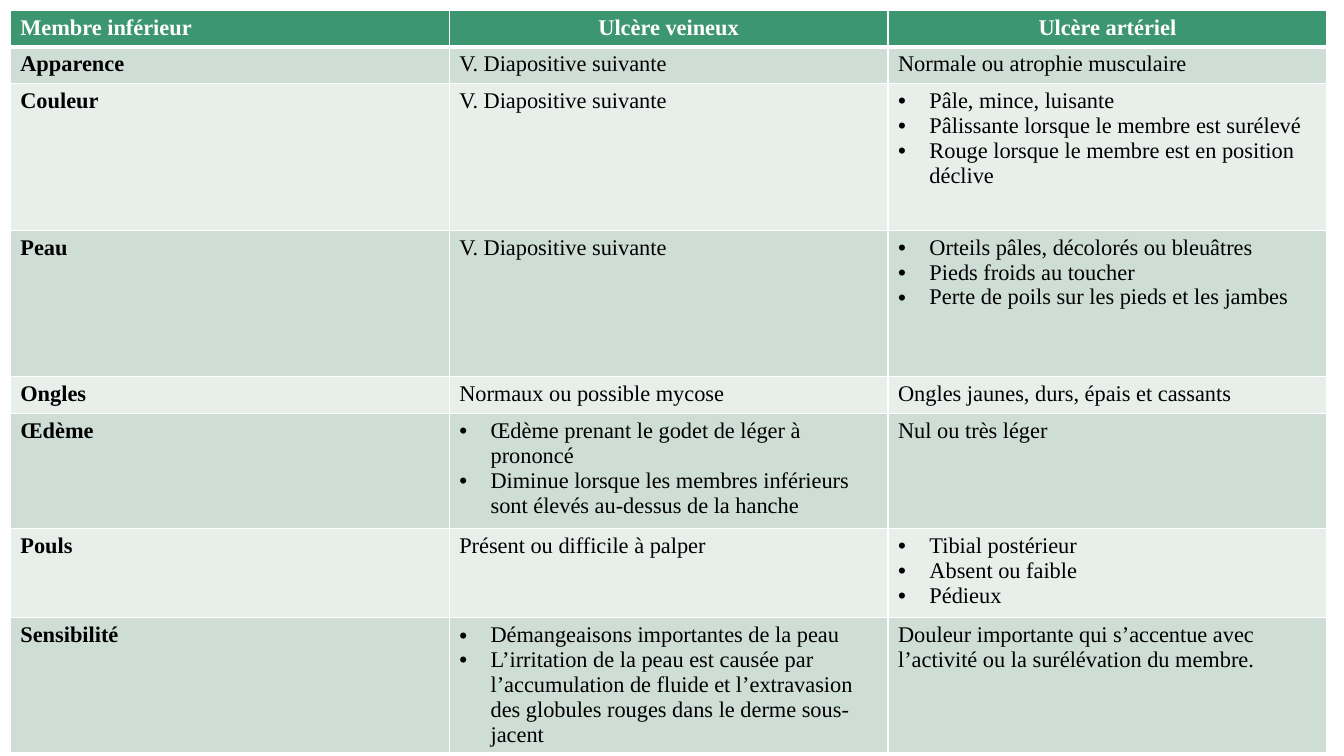
"""Builds a slide with a table comparing venous and arterial leg ulcers."""
from lxml.etree import SubElement
from pptx import Presentation
from pptx.dml.color import RGBColor
from pptx.enum.text import PP_ALIGN
from pptx.oxml import parse_xml
from pptx.oxml.ns import nsdecls, qn
from pptx.util import Cm, Pt

COLORS = {"header": "3C9770", "odd": "CEDDD5", "even": "E8EFEB",
          "white": "FFFFFF", "text": "000000"}
HEADERS = ["Membre inférieur", "Ulcère veineux", "Ulcère artériel"]
NEXT_SLIDE = "V. Diapositive suivante"
ROWS = [
    (0.92, HEADERS),
    (0.93, ["Apparence", NEXT_SLIDE, "Normale ou atrophie musculaire"]),
    (3.69, ["Couleur", NEXT_SLIDE,
            ["Pâle, mince, luisante",
             "Pâlissante lorsque le membre est surélevé",
             "Rouge lorsque le membre est en position déclive"]]),
    (3.69, ["Peau", NEXT_SLIDE,
            ["Orteils pâles, décolorés ou bleuâtres",
             "Pieds froids au toucher",
             "Perte de poils sur les pieds et les jambes"]]),
    (0.93, ["Ongles", "Normaux ou possible mycose",
            "Ongles jaunes, durs, épais et cassants"]),
    (2.9, ["Œdème",
           ["Œdème prenant le godet de léger à prononcé",
            "Diminue lorsque les membres inférieurs sont élevés "
            "au-dessus de la hanche"],
           "Nul ou très léger"]),
    (2.25, ["Pouls", "Présent ou difficile à palper",
            ["Tibial postérieur", "Absent ou faible", "Pédieux"]]),
    (3.15, ["Sensibilité",
            ["Démangeaisons importantes de la peau",
             "L’irritation de la peau est causée par l’accumulation de fluide "
             "et l’extravasion des globules rouges dans le derme sous-jacent"],
            "Douleur importante qui s’accentue avec l’activité ou la "
            "surélévation du membre."]),
]


def add_borders(cell, row):
    """Draw white cell borders, thicker below the header."""
    widths = {"lnL": 1, "lnR": 1, "lnT": 3 if row == 1 else 1,
              "lnB": 3 if row == 0 else 1}
    for i, (side, width) in enumerate(widths.items()):
        cell._tc.get_or_add_tcPr().insert(i, parse_xml(
            f'<a:{side} {nsdecls("a")} w="{Pt(width)}"><a:solidFill>'
            f'<a:srgbClr val="{COLORS["white"]}"/></a:solidFill></a:{side}>'))


def add_bullet(p):
    """Give a paragraph a round bullet with a hanging indent."""
    pPr = p._p.get_or_add_pPr()
    pPr.set("marL", str(Cm(0.79)))
    pPr.set("indent", str(-Cm(0.79)))
    SubElement(pPr, qn("a:buFont")).set("typeface", "Arial")
    SubElement(pPr, qn("a:buChar")).set("char", "•")


prs = Presentation()
prs.slide_width, prs.slide_height = Cm(33.87), Cm(19.05)
s = prs.slides.add_slide(prs.slide_layouts[6])

total = sum(height for height, _ in ROWS)
table = s.shapes.add_table(len(ROWS), len(HEADERS), Cm(0.26), Cm(0.26),
                           Cm(33.18), Cm(total)).table
for column in table.columns:
    column.width = Cm(11.06)

for row, (height, contents) in enumerate(ROWS):
    table.rows[row].height = Cm(height)
    fill = "header" if row == 0 else "odd" if row % 2 else "even"
    for col, content in enumerate(contents):
        cell = table.cell(row, col)
        cell.fill.solid()
        cell.fill.fore_color.rgb = RGBColor.from_string(COLORS[fill])
        add_borders(cell, row)
        tf = cell.text_frame
        bulleted = isinstance(content, list)
        for i, line in enumerate(content if bulleted else [content]):
            p = tf.add_paragraph() if i else tf.paragraphs[0]
            if bulleted:
                add_bullet(p)
            if row == 0 and col > 0:
                p.alignment = PP_ALIGN.CENTER
            r = p.add_run()
            r.text = line
            r.font.name = "Times New Roman"
            r.font.size = Pt(16)
            r.font.bold = row == 0 or col == 0
            r.font.color.rgb = RGBColor.from_string(
                COLORS["white" if row == 0 else "text"])

prs.save("out.pptx")
